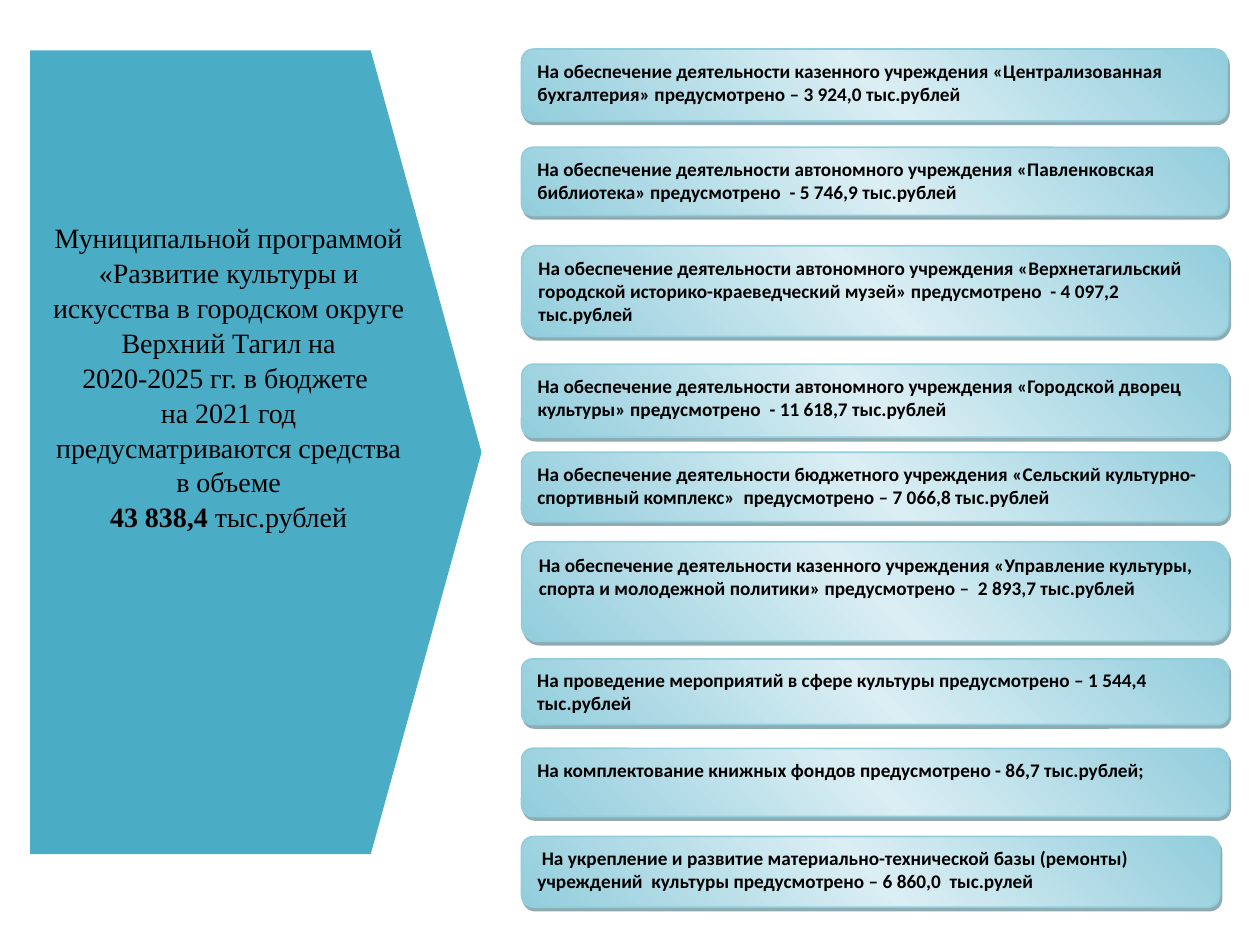
from copy import deepcopy

from lxml import etree
from pptx import Presentation
from pptx.dml.color import RGBColor
from pptx.enum.shapes import MSO_SHAPE
from pptx.enum.text import MSO_ANCHOR, PP_ALIGN
from pptx.oxml.ns import qn
from pptx.util import Inches, Pt

ARROW = MSO_SHAPE.PENTAGON
CARD = MSO_SHAPE.FLOWCHART_ALTERNATE_PROCESS
TOP = MSO_ANCHOR.TOP
LEFT, CENTER = PP_ALIGN.LEFT, PP_ALIGN.CENTER

TEAL, EDGE, PALE, SHADE, BLACK = "4BACC6", "92CDDC", "DAEEF3", "205867", "000000"
CARD_LEFT = 4.14

PROGRAM = [
    [("Муниципальной программой «Развитие культуры и искусства в городском округе Верхний Тагил на", False)],
    [("2020-2025 гг. в бюджете ", False)],
    [("на 2021 год предусматриваются средства в объеме", False)],
    [("43 838,4 ", True), ("тыс.рублей", False)],
]

# Top, width, height and wording of each card
EXPENSES = [
    (0.39, 5.6, 0.57, "На обеспечение деятельности казенного учреждения «Централизованная бухгалтерия» предусмотрено – 3 924,0 тыс.рублей"),
    (1.17, 5.6, 0.54, "На обеспечение деятельности автономного учреждения «Павленковская библиотека» предусмотрено  - 5 746,9 тыс.рублей"),
    (1.95, 5.61, 0.72, "На обеспечение деятельности автономного учреждения «Верхнетагильский городской историко-краеведческий музей» предусмотрено  - 4 097,2 тыс.рублей"),
    (2.89, 5.61, 0.58, "На обеспечение деятельности автономного учреждения «Городской дворец культуры» предусмотрено  - 11 618,7 тыс.рублей"),
    (3.59, 5.61, 0.55, "На обеспечение деятельности бюджетного учреждения «Сельский культурно-спортивный комплекс»  предусмотрено – 7 066,8 тыс.рублей"),
    (4.3, 5.61, 0.79, "На обеспечение деятельности казенного учреждения «Управление культуры, спорта и молодежной политики» предусмотрено –  2 893,7 тыс.рублей"),
    (5.23, 5.61, 0.52, "На проведение мероприятий в сфере культуры предусмотрено – 1 544,4 тыс.рублей"),
    (5.94, 5.61, 0.54, "На комплектование книжных фондов предусмотрено - 86,7 тыс.рублей;"),
    (6.64, 5.54, 0.56, " На укрепление и развитие материально-технической базы (ремонты) учреждений  культуры предусмотрено – 6 860,0  тыс.рулей"),
]


def color(value):
    return RGBColor.from_string(value)


def write(para, text, font="Calibri", size=11, bold=False, fill=BLACK, align=LEFT, spacing=None):
    para.alignment = align
    if spacing:
        para.line_spacing = spacing
    span = para.add_run()
    span.text = text
    span.font.name = font
    span.font.size = Pt(size)
    span.font.bold = bold
    span.font.color.rgb = color(fill)


class SlideBuilder:
    def __init__(self, page):
        self.page = page

    def shape(self, kind, left, top, width, height, line, weight):
        box = self.page.shapes.add_shape(kind, Inches(left), Inches(top), Inches(width), Inches(height))
        box.shadow.inherit = False
        box.line.color.rgb = color(line)
        box.line.width = Pt(weight)
        box.text_frame.word_wrap = True
        box.text_frame.vertical_anchor = TOP
        return box

    def arrow(self, left, top, width, height, paragraphs):
        box = self.shape(ARROW, left, top, width, height, TEAL, 10)
        box.adjustments[0] = 0.25
        box.fill.solid()
        box.fill.fore_color.rgb = color(TEAL)
        # Sharp corners on the wide outline
        etree.SubElement(box.line._get_or_add_ln(), qn("a:miter"), lim="800000")
        frame = box.text_frame
        frame.margin_top = Inches(1.27)
        for index, spans in enumerate(paragraphs):
            para = frame.add_paragraph() if index else frame.paragraphs[0]
            for text, bold in spans:
                write(para, text, font="Times New Roman", size=16, bold=bold, align=CENTER, spacing=1.04)

    def card(self, left, top, width, height, text):
        box = self.shape(CARD, left, top, width, height, EDGE, 1)
        self.gradient(box)
        self.shadow(box)
        write(box.text_frame.paragraphs[0], text, bold=True)

    def gradient(self, box):
        box.fill.gradient()
        box.fill.gradient_angle = 45
        stop_list = box._element.spPr.find(".//" + qn("a:gsLst"))
        stop_list.insert(1, deepcopy(stop_list[0]))
        for stop, position, value in zip(box.fill.gradient_stops, (0, 0.5, 1), (EDGE, PALE, EDGE)):
            stop.position = position
            stop.color.rgb = color(value)

    def shadow(self, box):
        effects = box._element.spPr.find(qn("a:effectLst"))
        outer = etree.SubElement(effects, qn("a:outerShdw"), blurRad="0", dist=str(Pt(2.2)),
                                 dir=str(63 * 60000), algn="ctr", rotWithShape="0")
        tint = etree.SubElement(outer, qn("a:srgbClr"), val=SHADE)
        etree.SubElement(tint, qn("a:alpha"), val="50000")


def main():
    deck = Presentation()
    deck.slide_width, deck.slide_height = Inches(10), Inches(7.5)
    builder = SlideBuilder(deck.slides.add_slide(deck.slide_layouts[6]))

    # Programme total
    builder.arrow(0.31, 0.47, 3.44, 6.24, PROGRAM)

    # Expense cards
    for top, width, height, text in EXPENSES:
        builder.card(CARD_LEFT, top, width, height, text)

    deck.save("out.pptx")


if __name__ == "__main__":
    main()
